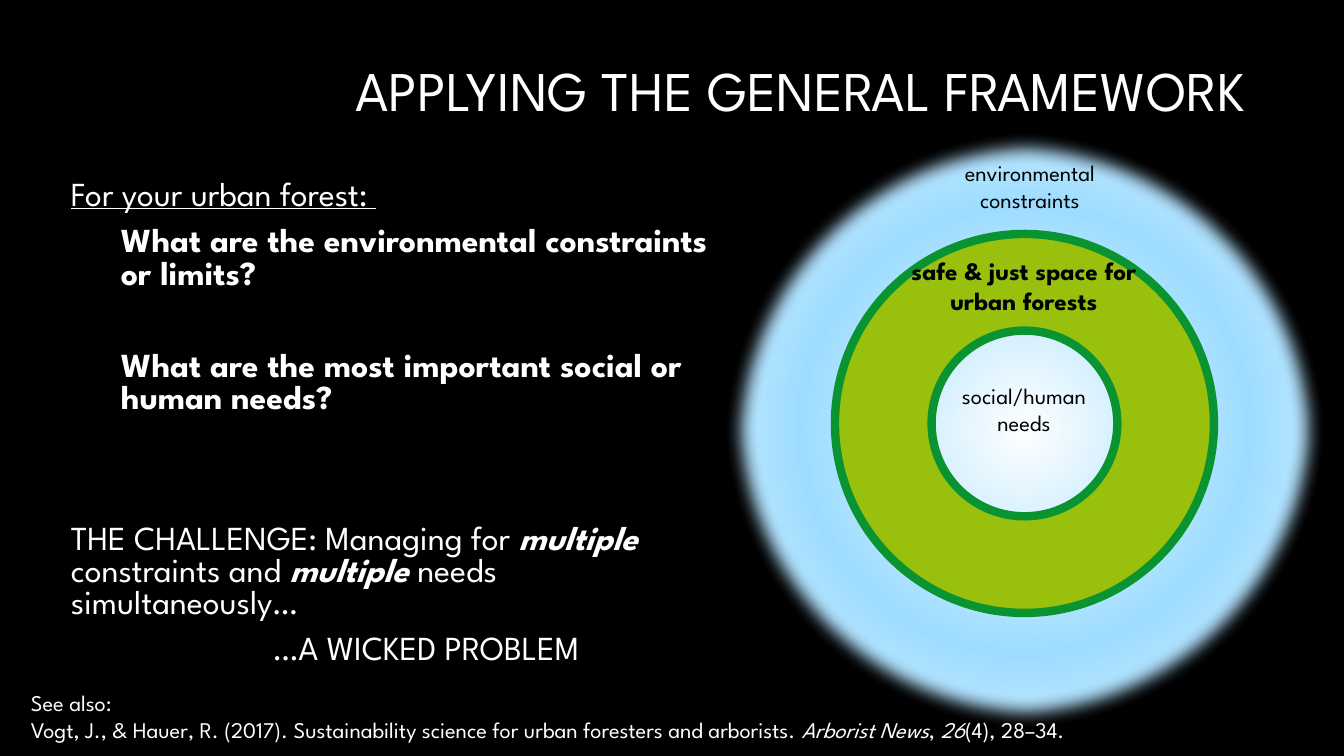
from lxml import etree
from pptx import Presentation
from pptx import util as u
from pptx.dml.color import RGBColor
from pptx.enum import shapes, text
from pptx.oxml import parse_xml
from pptx.oxml.ns import nsdecls, qn

PX = 914400 / 100.8
FONT = "League Spartan"
COLORS = {
    "black": "000000", "white": "FFFFFF", "sky": "9DDCFF", "pale": "E5F5FF",
    "rim": "019B5C", "lime": "98C00D", "green": "0A9431",
}


def px(*lengths):
    return [u.Emu(round(length * PX)) for length in lengths]


def add_text(page, place, paragraphs, size, color, align=text.PP_ALIGN.LEFT, bold=False):
    box = page.shapes.add_textbox(*px(*place))
    frame = box.text_frame
    frame.word_wrap = True
    for index, spans in enumerate(paragraphs):
        para = frame.add_paragraph() if index else frame.paragraphs[0]
        para.alignment = align
        para.font.name = FONT
        para.font.size = u.Pt(size)
        para.font.bold = bold
        para.font.color.rgb = RGBColor.from_string(COLORS[color])
        for words, style in spans:
            span = para.add_run()
            span.text = words
            span.font.name = FONT
            span.font.size = u.Pt(size)
            span.font.color.rgb = RGBColor.from_string(COLORS[color])
            span.font.bold = True if "b" in style else bold
            span.font.italic = "i" in style
            span.font.underline = "u" in style
    return frame


deck = Presentation()
deck.slide_width, deck.slide_height = px(1344, 756)
page = deck.slides.add_slide(deck.slide_layouts[6])
page.background.fill.solid()
page.background.fill.fore_color.rgb = RGBColor.from_string(COLORS["black"])

title = add_text(page, (90, 30, 1165, 126), [[("APPLYING THE GENERAL FRAMEWORK", "")]],
                 40, "white", text.PP_ALIGN.RIGHT)
title.vertical_anchor = text.MSO_ANCHOR.MIDDLE
title.paragraphs[0].line_spacing = 0.9

questions = [
    [("For your urban forest: ", "u")],
    [("What are the environmental constraints or limits?", "b")],
    [("What are the most important social or human needs?", "b")],
    [("THE CHALLENGE: Managing for ", ""), ("multiple ", "bi"), ("constraints and ", ""),
     ("multiple ", "bi"), ("needs simultaneously…", "")],
    [("…A WICKED PROBLEM", "")],
]
body = add_text(page, (61, 176, 657, 526), questions, 24, "white")
for para, before, indent in zip(body.paragraphs, (0, 10, 43, 77, 10), (0, 50, 50, 0, 202)):
    para.line_spacing = 0.8
    para.space_before = u.Pt(before)
    para._p.get_or_add_pPr().set("marL", str(px(indent)[0]))

rings = [
    (shapes.MSO_SHAPE.OVAL, (725, 132, 599, 596), "sky", "rim", 1),
    (shapes.MSO_SHAPE.DONUT, (835, 234, 379, 379), "lime", "green", 6),
]
for kind, place, fill, line, weight in rings:
    ring = page.shapes.add_shape(kind, *px(*place))
    ring.shadow.inherit = False
    ring.fill.solid()
    ring.fill.fore_color.rgb = RGBColor.from_string(COLORS[fill])
    ring.line.color.rgb = RGBColor.from_string(COLORS[line])
    ring.line.width = u.Pt(weight)
    if kind == shapes.MSO_SHAPE.DONUT:
        ring.adjustments[0] = 0.255
    else:
        stops = "".join(
            f'<a:gs pos="{place * 1000}"><a:srgbClr val="{COLORS[name]}"/></a:gs>'
            for place, name in ((0, "white"), (53, "sky"), (91, "pale")))
        glow = parse_xml(
            f'<a:gradFill {nsdecls("a")} rotWithShape="1"><a:gsLst>{stops}</a:gsLst>'
            '<a:path path="circle"><a:fillToRect l="50000" t="50000" r="50000" b="50000"/>'
            '</a:path></a:gradFill>')
        properties = ring._element.spPr
        properties.replace(properties.find(qn("a:solidFill")), glow)
        edge = etree.SubElement(properties.find(qn("a:effectLst")), qn("a:softEdge"))
        edge.set("rad", str(u.Pt(12.5)))

labels = [
    ("safe & just space for urban forests", (900, 250, 248, 123), 18, True),
    ("environmental constraints", (918, 154, 224, 78), 16, False),
    ("social/human needs", (926, 377, 196, 78), 16, False),
]
for words, place, size, bold in labels:
    add_text(page, place, [[(words, "")]], size, "black", text.PP_ALIGN.CENTER, bold)

citation = [
    [("See also:", "")],
    [("Vogt, J., & Hauer, R. (2017). Sustainability science for urban foresters and arborists. ", ""),
     ("Arborist News", "i"), (", ", ""), ("26", "i"), ("(4), 28–34.", "")],
]
add_text(page, (21, 684, 1263, 65), citation, 16, "white")

deck.save("out.pptx")
